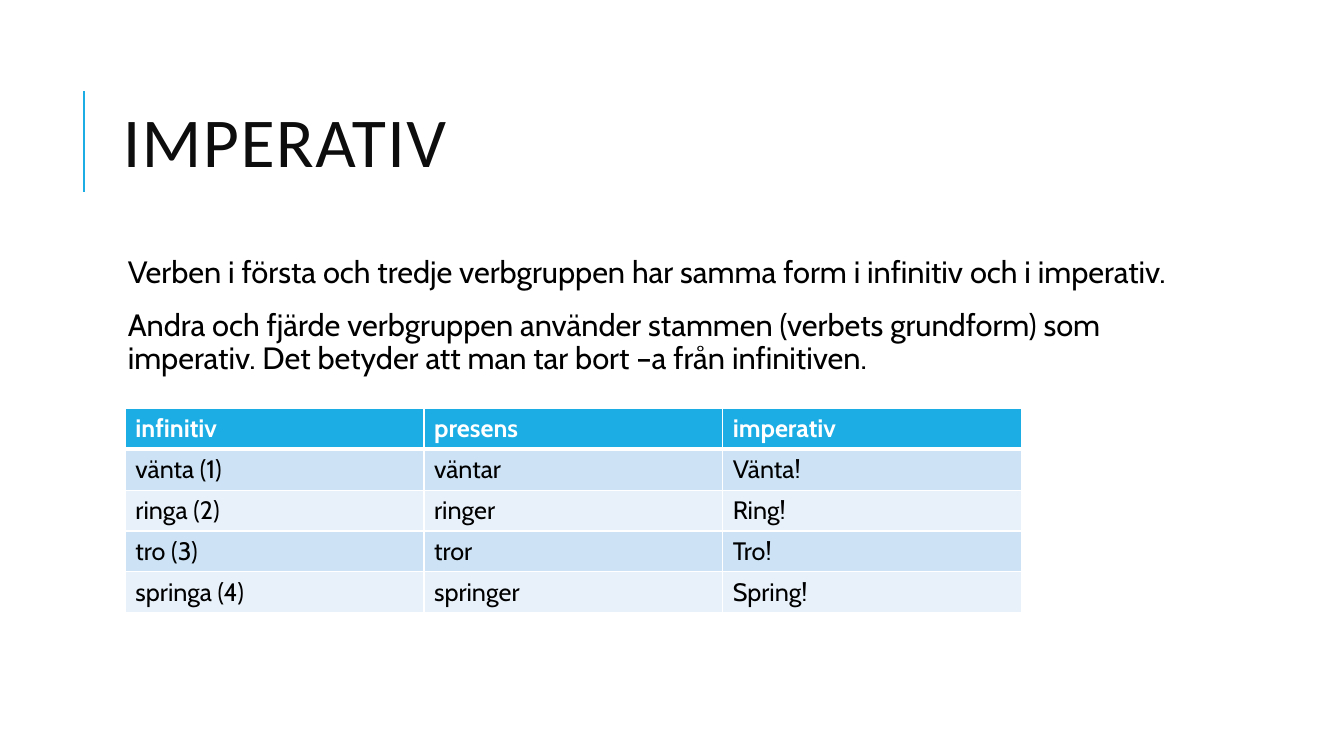
from dataclasses import dataclass

from lxml import etree
from pptx import Presentation
from pptx import util as u
from pptx.dml.color import RGBColor
from pptx.enum import shapes, text
from pptx.oxml.ns import qn


@dataclass(frozen=True)
class Theme:
    accent: str = "1CADE4"
    title: str = "0D0D0D"
    ink: str = "000000"
    white: str = "FFFFFF"
    bands: tuple = ("CDE3F5", "E8F1FA")
    title_font: str = "Calibri"
    body_font: str = "Cabin"
    title_size: int = 50
    body_size: int = 22
    table_size: int = 18


THEME = Theme()

RULES = [
    "Verben i första och tredje verbgruppen har samma form i infinitiv och i imperativ.",
    "Andra och fjärde verbgruppen använder stammen (verbets grundform) som imperativ. "
    "Det betyder att man tar bort –a från infinitiven.",
]
VERBS = [
    ("infinitiv", "presens", "imperativ"),
    ("vänta (1)", "väntar", "Vänta!"),
    ("ringa (2)", "ringer", "Ring!"),
    ("tro (3)", "tror", "Tro!"),
    ("springa (4)", "springer", "Spring!"),
]


def write(paragraph, words, size, color, font=THEME.body_font, bold=False,
          line_spacing=1.0, before=0, after=0):
    paragraph.alignment = text.PP_ALIGN.LEFT
    paragraph.line_spacing = line_spacing
    paragraph.space_before = u.Pt(before)
    paragraph.space_after = u.Pt(after)
    run = paragraph.add_run()
    run.text = words
    run.font.size = u.Pt(size)
    run.font.name = font
    run.font.bold = bold
    run.font.color.rgb = RGBColor.from_string(color)
    return run


def place(shape, left, top, width, height):
    shape.left, shape.top = u.Cm(left), u.Cm(top)
    shape.width, shape.height = u.Cm(width), u.Cm(height)


def add_title(slide, left, top, width, height):
    rule = slide.shapes.add_connector(
        shapes.MSO_CONNECTOR.STRAIGHT,
        u.Cm(left - 0.73), u.Cm(top + 3.2), u.Cm(left - 0.73), u.Cm(top + 0.66))
    rule.line.color.rgb = RGBColor.from_string(THEME.accent)
    rule.line.width = u.Pt(1.5)
    etree.SubElement(rule._element.spPr, qn("a:effectLst"))

    title = slide.shapes.title
    place(title, left, top, width, height)
    frame = title.text_frame
    frame.auto_size = text.MSO_AUTO_SIZE.NONE
    frame.vertical_anchor = text.MSO_ANCHOR.MIDDLE
    run = write(frame.paragraphs[0], "IMPERATIV", THEME.title_size, THEME.title,
                font=THEME.title_font, line_spacing=0.8)
    run.font._element.set("spc", "100")


def add_bullet(paragraph):
    properties = paragraph._p.get_or_add_pPr()
    properties.set("marL", str(u.Cm(0.25)))
    properties.set("indent", str(-u.Cm(0.25)))
    color = etree.SubElement(properties, qn("a:buClr"))
    etree.SubElement(color, qn("a:srgbClr"), val=THEME.accent)
    etree.SubElement(properties, qn("a:buChar"), char=" ")


def add_rules(slide, left, top, width, height):
    body = slide.placeholders[1]
    place(body, left, top, width, height)
    frame = body.text_frame
    frame.auto_size = text.MSO_AUTO_SIZE.NONE
    frame.vertical_anchor = text.MSO_ANCHOR.TOP
    frame.margin_left = frame.margin_right = u.Cm(0.13)
    frame.margin_top = frame.margin_bottom = u.Cm(0.13)
    for index, words in enumerate(RULES):
        paragraph = frame.add_paragraph() if index else frame.paragraphs[0]
        add_bullet(paragraph)
        write(paragraph, words, THEME.body_size, THEME.ink, line_spacing=0.9,
              before=12 if index else 0, after=2)


def add_border(cell, side, points):
    line = etree.SubElement(cell._tc.get_or_add_tcPr(), qn(f"a:ln{side}"),
                            w=str(u.Pt(points)))
    fill = etree.SubElement(line, qn("a:solidFill"))
    etree.SubElement(fill, qn("a:srgbClr"), val=THEME.white)


def add_verb_table(slide, left, top, width, height):
    table = slide.shapes.add_table(
        len(VERBS), len(VERBS[0]),
        u.Cm(left), u.Cm(top), u.Cm(width), u.Cm(height)).table
    for row_index, verb_forms in enumerate(VERBS):
        header = row_index == 0
        fill = THEME.accent if header else THEME.bands[(row_index - 1) % 2]
        borders = {"L": 1, "R": 1, "T": 3 if row_index == 1 else 1, "B": 3 if header else 1}
        for column_index, words in enumerate(verb_forms):
            cell = table.cell(row_index, column_index)
            for side, points in borders.items():
                add_border(cell, side, points)
            cell.fill.solid()
            cell.fill.fore_color.rgb = RGBColor.from_string(fill)
            write(cell.text_frame.paragraphs[0], words, THEME.table_size,
                  THEME.white if header else THEME.ink, bold=header)


def main():
    presentation = Presentation()
    presentation.slide_width = u.Cm(33.87)
    presentation.slide_height = u.Cm(19.05)
    slide = presentation.slides.add_slide(presentation.slide_layouts[1])
    add_title(slide, 2.84, 1.63, 27, 4.17)
    add_rules(slide, 2.84, 6.35, 27, 11.18)
    add_verb_table(slide, 3.16, 10.29, 22.58, 5.15)
    presentation.save("out.pptx")


if __name__ == "__main__":
    main()
